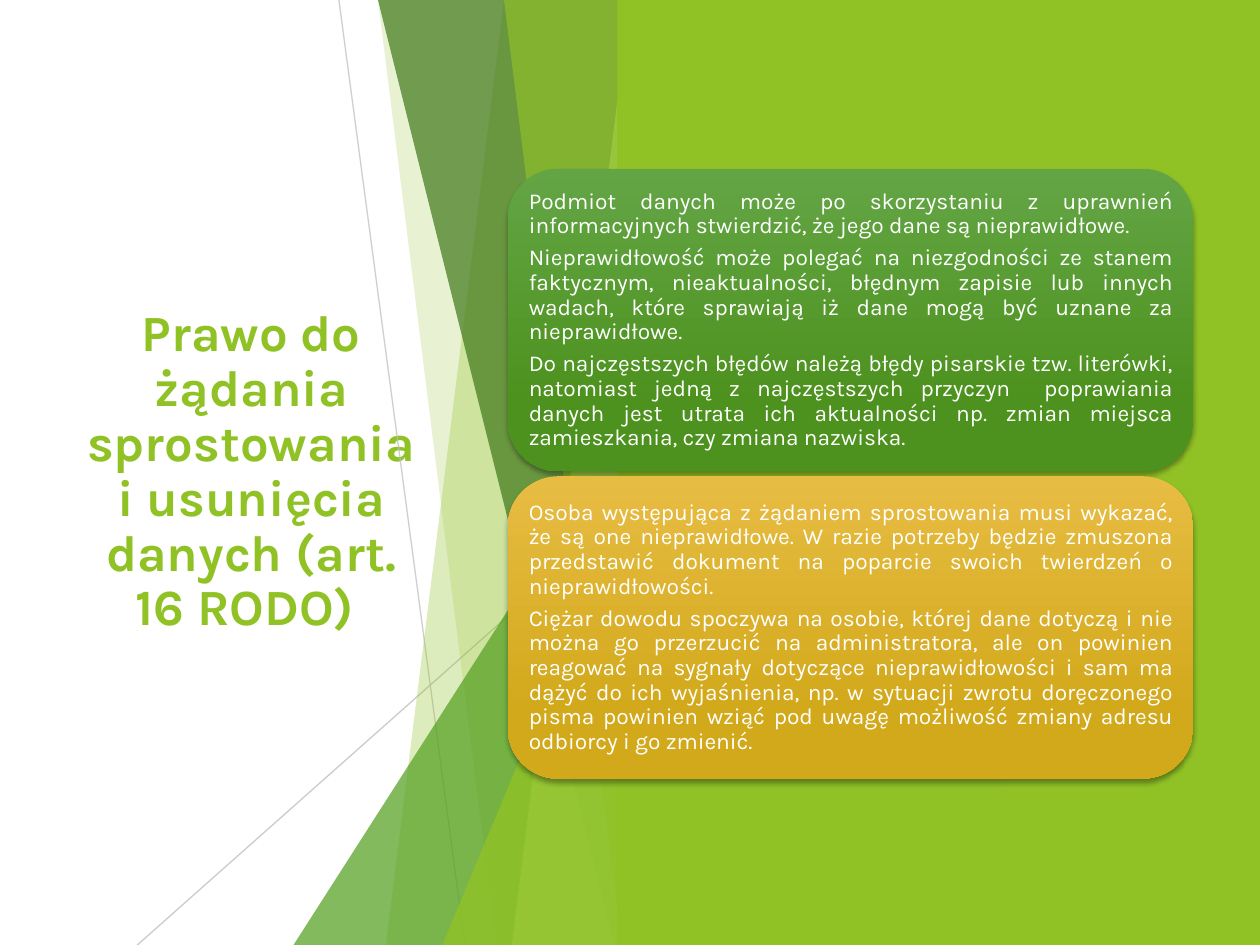
from lxml import etree
from pptx import Presentation
from pptx.dml.color import RGBColor
from pptx.enum.shapes import MSO_CONNECTOR, MSO_SHAPE
from pptx.enum.text import MSO_ANCHOR, MSO_AUTO_SIZE, PP_ALIGN
from pptx.oxml.ns import qn
from pptx.util import Inches, Pt

STRAIGHT = MSO_CONNECTOR.STRAIGHT
RECT = MSO_SHAPE.RECTANGLE
ROUNDED = MSO_SHAPE.ROUNDED_RECTANGLE
TRIANGLE = MSO_SHAPE.ISOSCELES_TRIANGLE
MIDDLE = MSO_ANCHOR.MIDDLE
NO_AUTOFIT = MSO_AUTO_SIZE.NONE
CENTER, JUSTIFY = PP_ALIGN.CENTER, PP_ALIGN.JUSTIFY

WIDTH, HEIGHT = 10, 7.5
FACET_RIGHT = 5
FONT = "Karla"
COLORS = {
    "lime": "90C226",
    "green": "54A021",
    "forest": "3F7819",
    "pale": "C0E474",
    "line": "BFBFBF",
    "white": "FFFFFF",
    "black": "000000",
    "green_top": "63A545",
    "green_bottom": "4D921E",
    "gold_top": "E7BC43",
    "gold_bottom": "D2A91B",
}

TITLE = "Prawo do żądania sprostowania i usunięcia danych (art. 16 RODO) "
LINES = [((2.69, 0), (3.69, HEIGHT), 75), ((5, 4.03), (1.09, HEIGHT), 80)]
# Back to front: kind, then top and bottom x of the left edge (facet)
# or left x and top y (triangle), then colour and opacity.
FACETS = [
    ("facet", 4.21, 2.53, "lime", 30),
    ("facet", 2.88, 3.87, "lime", 20),
    ("triangle", 2.33, 3.33, "green", 72),
    ("facet", 2.66, 4.68, "forest", 70),
    ("facet", 4.78, 3.94, "pale", 70),
    ("facet", 3.97, 4.88, "lime", 65),
    ("triangle", 3.51, 3.93, "lime", 80),
]
CARDS = [
    ("green", [
        "Podmiot danych może po skorzystaniu z uprawnień informacyjnych "
        "stwierdzić, że jego dane są nieprawidłowe. ",
        "Nieprawidłowość może polegać na niezgodności ze stanem faktycznym, "
        "nieaktualności, błędnym zapisie lub innych wadach, które sprawiają "
        "iż dane mogą być uznane za nieprawidłowe. ",
        "Do najczęstszych błędów należą błędy pisarskie tzw. literówki, "
        "natomiast jedną z najczęstszych przyczyn  poprawiania danych jest "
        "utrata ich aktualności np. zmian miejsca zamieszkania, czy zmiana "
        "nazwiska.",
    ]),
    ("gold", [
        "Osoba występująca z żądaniem sprostowania musi wykazać, że są one "
        "nieprawidłowe. W razie potrzeby będzie zmuszona przedstawić dokument "
        "na poparcie swoich twierdzeń o nieprawidłowości. ",
        "Ciężar dowodu spoczywa na osobie, której dane dotyczą i nie można go "
        "przerzucić na administratora, ale on powinien reagować na sygnały "
        "dotyczące nieprawidłowości i sam ma dążyć do ich wyjaśnienia, np. "
        "w sytuacji zwrotu doręczonego pisma powinien wziąć pod uwagę "
        "możliwość zmiany adresu odbiorcy i go zmienić.",
    ]),
]
CARD_TOP, CARD_HEIGHT, CARD_GAP = 1.34, 2.4, 0.04


def rgb(name):
    return RGBColor.from_string(COLORS[name])


def set_attrs(target, values):
    for name, value in values.items():
        setattr(target, name, value)


def set_opacity(sp, percent):
    """Make every solid colour of the shape see-through."""
    for clr in sp._element.spPr.iter(qn("a:srgbClr")):
        etree.SubElement(clr, qn("a:alpha"), val=str(percent * 1000))


class SlideBuilder:
    text_frame = {"word_wrap": True, "auto_size": NO_AUTOFIT,
                  "vertical_anchor": MIDDLE}
    card_margins = {f"margin_{side}": Inches(0.05)
                    for side in ("left", "top", "right", "bottom")}
    title_par = {"alignment": CENTER, "line_spacing": 0.9}
    card_par = {"alignment": JUSTIFY, "line_spacing": 0.9,
                "space_after": Pt(4.3)}
    title_font = {"name": FONT, "size": Pt(29), "bold": True}
    card_font = {"name": FONT, "size": Pt(13)}

    def __init__(self, slide):
        self.slide = slide
        self.shapes = slide.shapes

    def fill_text(self, tf, texts, par, font, color):
        set_attrs(tf, self.text_frame)
        for i, text in enumerate(texts):
            p = tf.add_paragraph() if i else tf.paragraphs[0]
            set_attrs(p, par)
            r = p.add_run()
            r.text = text
            set_attrs(r.font, font)
            r.font.color.rgb = rgb(color)

    def title(self, text, left, top, width, height):
        sp = self.shapes.title
        set_attrs(sp, {"left": Inches(left), "top": Inches(top),
                       "width": Inches(width), "height": Inches(height)})
        self.fill_text(sp.text_frame, [text], self.title_par,
                       self.title_font, "lime")

    def line(self, start, end, opacity):
        line = self.shapes.add_connector(
            STRAIGHT, *(Inches(v) for v in (*start, *end)))
        line.line.color.rgb = rgb("line")
        line.line.width = Pt(0.75)
        set_opacity(line, opacity)
        etree.SubElement(line._element.spPr, qn("a:effectLst"))

    def paint(self, sp, color, opacity=100):
        sp.shadow.inherit = False
        sp.fill.solid()
        sp.fill.fore_color.rgb = rgb(color)
        sp.line.fill.background()
        if opacity < 100:
            set_opacity(sp, opacity)

    def shape(self, kind, left, top, width, height):
        return self.shapes.add_shape(
            kind, *(Inches(v) for v in (left, top, width, height)))

    def facet(self, top_x, bottom_x, color, opacity):
        """Draw a full-height strip with a slanted left edge."""
        builder = self.shapes.build_freeform(top_x, 0, scale=Inches(1))
        builder.add_line_segments(
            [(FACET_RIGHT, 0), (FACET_RIGHT, HEIGHT), (bottom_x, HEIGHT)])
        self.paint(builder.convert_to_shape(), color, opacity)

    def triangle(self, left, top, color, opacity):
        """Draw a right triangle in the lower corner of the facets."""
        sp = self.shape(TRIANGLE, left, top, FACET_RIGHT - left, HEIGHT - top)
        sp.adjustments[0] = 1
        self.paint(sp, color, opacity)

    def panel(self, left):
        self.paint(self.shape(RECT, left, 0, WIDTH - left, HEIGHT), "lime")

    def card(self, top, color, texts):
        sp = self.shape(ROUNDED, 4.03, top, 5.44, CARD_HEIGHT)
        sp.line.fill.background()
        sp.fill.gradient()
        sp.fill.gradient_angle = 270
        stops = ((0, f"{color}_top"), (0.78, f"{color}_bottom"))
        for stop, (position, name) in zip(sp.fill.gradient_stops, stops):
            stop.position = position
            stop.color.rgb = rgb(name)
        self.drop_shadow(sp)
        set_attrs(sp.text_frame, self.card_margins)
        self.fill_text(sp.text_frame, texts, self.card_par,
                       self.card_font, "white")

    def drop_shadow(self, sp):
        sp.shadow.inherit = False
        effects = sp._element.spPr.find(qn("a:effectLst"))
        shadow = etree.SubElement(
            effects, qn("a:outerShdw"), blurRad=str(Pt(3)), dist=str(Pt(2)),
            dir="5400000", rotWithShape="0")
        clr = etree.SubElement(shadow, qn("a:srgbClr"), val=COLORS["black"])
        etree.SubElement(clr, qn("a:alpha"), val="35000")


def main():
    prs = Presentation()
    prs.slide_width, prs.slide_height = Inches(WIDTH), Inches(HEIGHT)
    s = SlideBuilder(prs.slides.add_slide(prs.slide_layouts[5]))
    s.title(TITLE, 0.54, 1.51, 2.91, 4.48)
    for start, end, opacity in LINES:
        s.line(start, end, opacity)
    draw = {"facet": s.facet, "triangle": s.triangle}
    for kind, *values in FACETS:
        draw[kind](*values)
    s.panel(4.9)
    for i, (color, texts) in enumerate(CARDS):
        s.card(CARD_TOP + i * (CARD_HEIGHT + CARD_GAP), color, texts)
    prs.save("out.pptx")


if __name__ == "__main__":
    main()
